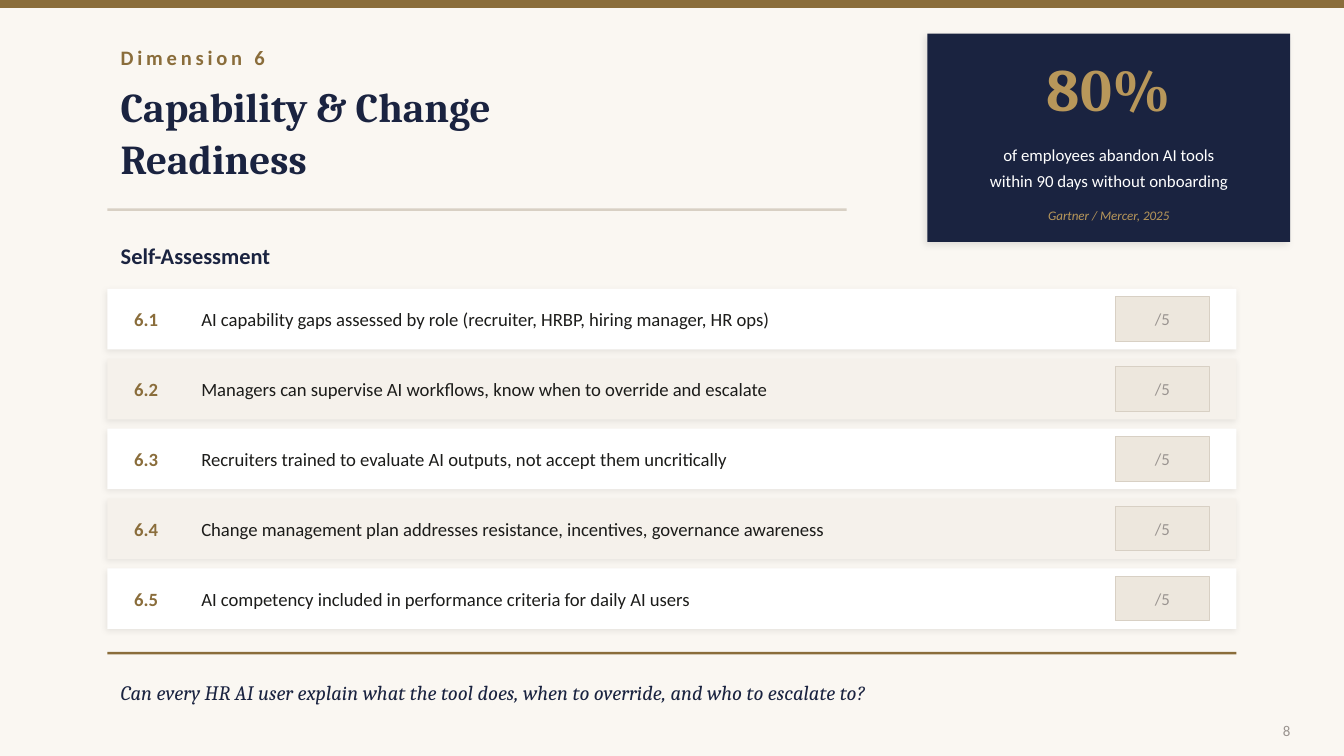
from lxml.etree import SubElement
from pptx import Presentation
from pptx.dml.color import RGBColor
from pptx.enum.shapes import MSO_SHAPE as Shape
from pptx.enum.text import MSO_ANCHOR as Anchor, PP_ALIGN as Align
from pptx.oxml.ns import qn
from pptx.util import Inches, Pt

COLORS = {
    "cream": "FAF7F2", "bronze": "8A6D3B", "gold": "B8975A", "navy": "1A2340",
    "white": "FFFFFF", "ink": "1C1C1A", "gray": "9A9490", "sand": "F5F1EB",
    "score": "EDE7DD", "rule": "D8D0C4", "black": "000000",
}
SANS, SERIF = "Calibri", "Cambria"

# Content
DIMENSION = "Dimension 6"
TITLE = ["Capability & Change", "Readiness"]
STAT = "80%"
STAT_LINES = ["of employees abandon AI tools", "within 90 days without onboarding"]
STAT_SOURCE = "Gartner / Mercer, 2025"
HEADING = "Self-Assessment"
CRITERIA = [
    ("6.1", "AI capability gaps assessed by role (recruiter, HRBP, hiring manager, HR ops)"),
    ("6.2", "Managers can supervise AI workflows, know when to override and escalate"),
    ("6.3", "Recruiters trained to evaluate AI outputs, not accept them uncritically"),
    ("6.4", "Change management plan addresses resistance, incentives, governance awareness"),
    ("6.5", "AI competency included in performance criteria for daily AI users"),
]
SCORE = "/5"
QUESTION = "Can every HR AI user explain what the tool does, when to override, and who to escalate to?"
PAGE_NUMBER = "8"

# Layout
SLIDE_WIDTH = 10
LEFT, CONTENT_WIDTH = 0.8, 8.4
ROW_TOP, ROW_HEIGHT, ROW_STEP = 2.15, 0.45, 0.52
SCORE_HEIGHT = 0.33


def color(name):
    return RGBColor.from_string(COLORS[name])


def add_shadow(shape, opacity, blur, distance):
    effects = shape._element.spPr.find(qn("a:effectLst"))
    outer = SubElement(effects, qn("a:outerShdw"), blurRad=str(Pt(blur)), dist=str(Pt(distance)),
                       dir=str(135 * 60000), algn="bl", rotWithShape="0")
    tint = SubElement(outer, qn("a:srgbClr"), val=COLORS["black"])
    SubElement(tint, qn("a:alpha"), val=str(opacity * 1000))


def add_rect(page, left, top, width, height, fill, line=None, shadow=None):
    shape = page.shapes.add_shape(Shape.RECTANGLE, *map(Inches, (left, top, width, height)))
    shape.shadow.inherit = False
    shape.fill.solid()
    shape.fill.fore_color.rgb = color(fill)
    if line:
        shape.line.color.rgb = color(line)
        shape.line.width = Pt(0.5)
    else:
        shape.line.fill.background()
    if shadow:
        add_shadow(shape, *shadow)


def add_text(page, left, top, width, height, lines, size, ink, font=SANS, bold=False,
             italic=False, align=Align.LEFT, anchor=Anchor.MIDDLE, spacing=None, tracking=None):
    box = page.shapes.add_textbox(*map(Inches, (left, top, width, height)))
    frame = box.text_frame
    frame.word_wrap = True
    frame.vertical_anchor = anchor
    for index, line in enumerate(lines):
        para = frame.add_paragraph() if index else frame.paragraphs[0]
        para.alignment = align
        if spacing:
            para.line_spacing = spacing
        span = para.add_run()
        span.text = line
        span.font.name, span.font.size = font, Pt(size)
        span.font.bold, span.font.italic = bold, italic
        span.font.color.rgb = color(ink)
        if tracking:
            span.font._element.set("spc", str(tracking * 100))


def add_criterion(page, index, number, text):
    top = ROW_TOP + index * ROW_STEP
    score_area = (8.3, top + (ROW_HEIGHT - SCORE_HEIGHT) / 2, 0.7, SCORE_HEIGHT)
    add_rect(page, LEFT, top, CONTENT_WIDTH, ROW_HEIGHT,
             "sand" if index % 2 else "white", shadow=(8, 3, 1))
    add_text(page, 0.9, top, 0.45, ROW_HEIGHT, [number], 10, "bronze", bold=True)
    add_text(page, 1.4, top, 6.6, ROW_HEIGHT, [text], 10, "ink")
    add_rect(page, *score_area, "score", line="rule")
    add_text(page, *score_area, [SCORE], 9, "gray", align=Align.CENTER)


def main():
    deck = Presentation()
    deck.slide_width = Inches(SLIDE_WIDTH)
    deck.slide_height = Inches(SLIDE_WIDTH * 9 / 16)
    page = deck.slides.add_slide(deck.slide_layouts[6])
    page.background.fill.solid()
    page.background.fill.fore_color.rgb = color("cream")

    # Top band and title
    add_rect(page, 0, 0, SLIDE_WIDTH, 0.06, "bronze")
    add_text(page, LEFT, 0.25, 4, 0.35, [DIMENSION], 11, "bronze", bold=True, tracking=2)
    add_text(page, LEFT, 0.55, 5.5, 0.85, TITLE, 22, "navy", SERIF, bold=True, spacing=1.05)

    # Statistic card
    add_rect(page, 6.9, 0.25, 2.7, 1.55, "navy", shadow=(10, 4, 2))
    add_text(page, 6.9, 0.3, 2.7, 0.7, [STAT], 32, "gold", SERIF, bold=True, align=Align.CENTER)
    add_text(page, 7, 0.95, 2.5, 0.55, STAT_LINES, 9, "white", align=Align.CENTER, spacing=1.3)
    add_text(page, 7, 1.5, 2.5, 0.2, [STAT_SOURCE], 7, "gold", italic=True, align=Align.CENTER)

    # Self-assessment rows
    add_rect(page, LEFT, 1.55, 5.5, 0.02, "rule")
    add_text(page, LEFT, 1.75, 4, 0.3, [HEADING], 12, "navy", bold=True)
    for index, (number, text) in enumerate(CRITERIA):
        add_criterion(page, index, number, text)

    # Closing question and page number
    add_rect(page, LEFT, 4.85, CONTENT_WIDTH, 0.02, "bronze")
    add_text(page, LEFT, 4.95, CONTENT_WIDTH, 0.4, [QUESTION], 11, "navy", SERIF, italic=True)
    add_text(page, 9.2, 5.25, 0.5, 0.3, [PAGE_NUMBER], 8, "gray",
             align=Align.RIGHT, anchor=Anchor.BOTTOM)

    deck.save("out.pptx")


if __name__ == "__main__":
    main()
